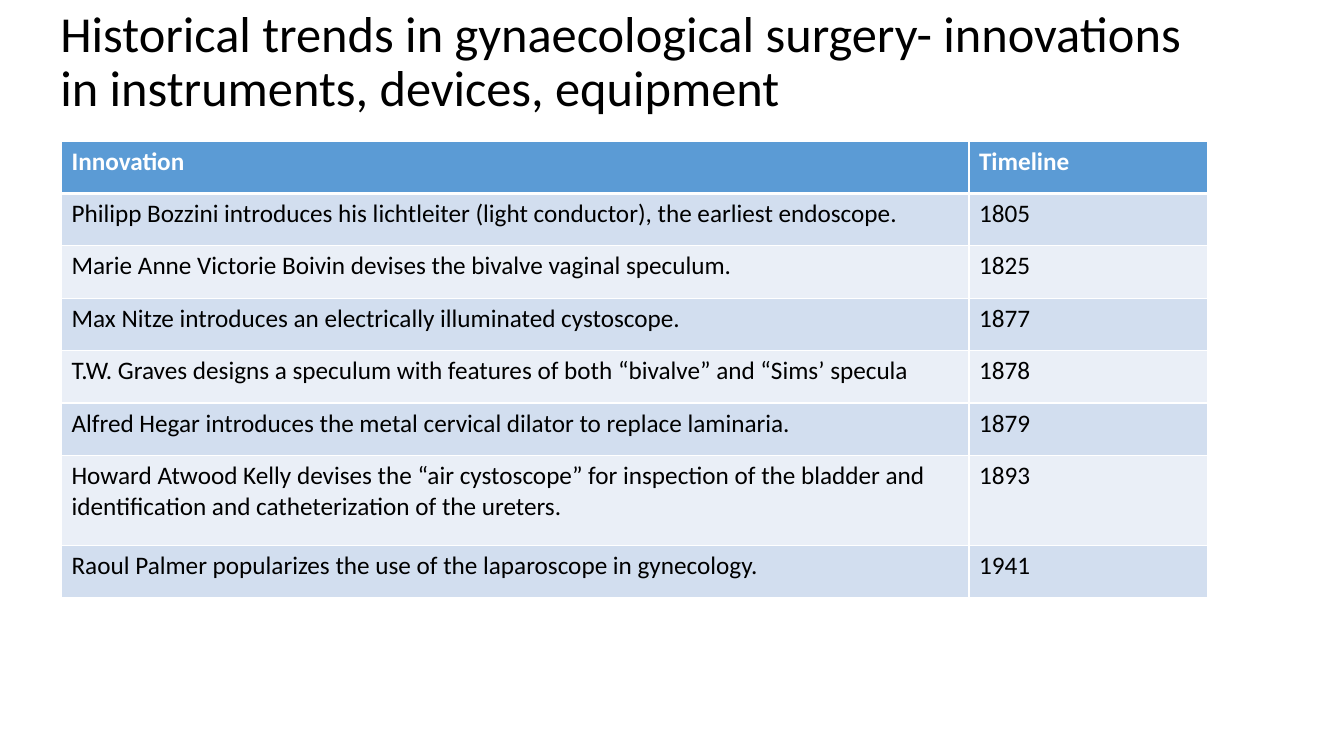
from lxml import etree
from pptx import Presentation
from pptx.dml.color import RGBColor
from pptx.enum.text import MSO_ANCHOR
from pptx.oxml.ns import qn
from pptx.util import Inches, Pt

MIDDLE = MSO_ANCHOR.MIDDLE
BLACK = RGBColor(0x00, 0x00, 0x00)
WHITE = RGBColor(0xFF, 0xFF, 0xFF)
HEADER_BLUE = RGBColor(0x5B, 0x9B, 0xD5)
BAND_DARK = RGBColor(0xD2, 0xDE, 0xEF)
BAND_LIGHT = RGBColor(0xEA, 0xEF, 0xF7)

TITLE = "Historical trends in gynaecological surgery- innovations in instruments, devices, equipment"
INNOVATIONS = [
    ("Innovation", "Timeline"),
    ("Philipp Bozzini introduces his lichtleiter (light conductor), the earliest endoscope.", "1805"),
    ("Marie Anne Victorie Boivin devises the bivalve vaginal speculum.", "1825"),
    ("Max Nitze introduces an electrically illuminated cystoscope.", "1877"),
    ("T.W. Graves designs a speculum with features of both “bivalve” and “Sims’ specula", "1878"),
    ("Alfred Hegar introduces the metal cervical dilator to replace laminaria.", "1879"),
    ("Howard Atwood Kelly devises the “air cystoscope” for inspection of the bladder and "
     "identification and catheterization of the ureters.", "1893"),
    ("Raoul Palmer popularizes the use of the laparoscope in gynecology.", "1941"),
]
COLUMN_WIDTHS = (9, 2.37)
ROW_HEIGHT = 0.52
TALL_ROW_HEIGHT = 0.89
TALL_ROW = 6


class SlideBuilder:
    font = "Calibri"

    def __init__(self, page):
        self.page = page

    def style(self, paragraph, size, color, bold=False):
        for span in paragraph.runs:
            span.font.name = self.font
            span.font.size = Pt(size)
            span.font.bold = bold
            span.font.color.rgb = color

    def title(self, text, left, top, width, height):
        box = self.page.shapes.add_textbox(Inches(left), Inches(top), Inches(width), Inches(height))
        frame = box.text_frame
        frame.word_wrap = True
        frame.vertical_anchor = MIDDLE
        frame.text = text
        frame.paragraphs[0].line_spacing = 0.9
        self.style(frame.paragraphs[0], 36, BLACK)

    def border(self, cell, side, width):
        properties = cell._tc.get_or_add_tcPr()
        line = etree.SubElement(properties, qn(f"a:ln{side}"), w=str(Pt(width)))
        fill = etree.SubElement(line, qn("a:solidFill"))
        etree.SubElement(fill, qn("a:srgbClr"), val=str(WHITE))

    def cell(self, cell, text, row):
        header = row == 0
        widths = {"L": 1, "R": 1, "T": 3 if row == 1 else 1, "B": 3 if header else 1}
        for side, width in widths.items():
            self.border(cell, side, width)
        cell.fill.solid()
        cell.fill.fore_color.rgb = HEADER_BLUE if header else (BAND_LIGHT, BAND_DARK)[row % 2]
        cell.text = text
        self.style(cell.text_frame.paragraphs[0], 18, WHITE if header else BLACK, header)

    def table(self, records, left, top, widths, heights):
        frame = self.page.shapes.add_table(
            len(records), len(widths), Inches(left), Inches(top),
            Inches(sum(widths)), Inches(sum(heights)))
        table = frame.table
        for column, width in zip(table.columns, widths):
            column.width = Inches(width)
        for row, (record, height) in enumerate(zip(records, heights)):
            table.rows[row].height = Inches(height)
            for column, text in enumerate(record):
                self.cell(table.cell(row, column), text, row)


def main():
    deck = Presentation()
    deck.slide_width = Inches(13.33)
    deck.slide_height = Inches(7.5)
    builder = SlideBuilder(deck.slides.add_slide(deck.slide_layouts[6]))
    builder.title(TITLE, 0.5, 0, 11.37, 1.26)
    heights = [TALL_ROW_HEIGHT if row == TALL_ROW else ROW_HEIGHT for row in range(len(INNOVATIONS))]
    builder.table(INNOVATIONS, 0.61, 1.4, COLUMN_WIDTHS, heights)
    deck.save("out.pptx")


if __name__ == "__main__":
    main()
